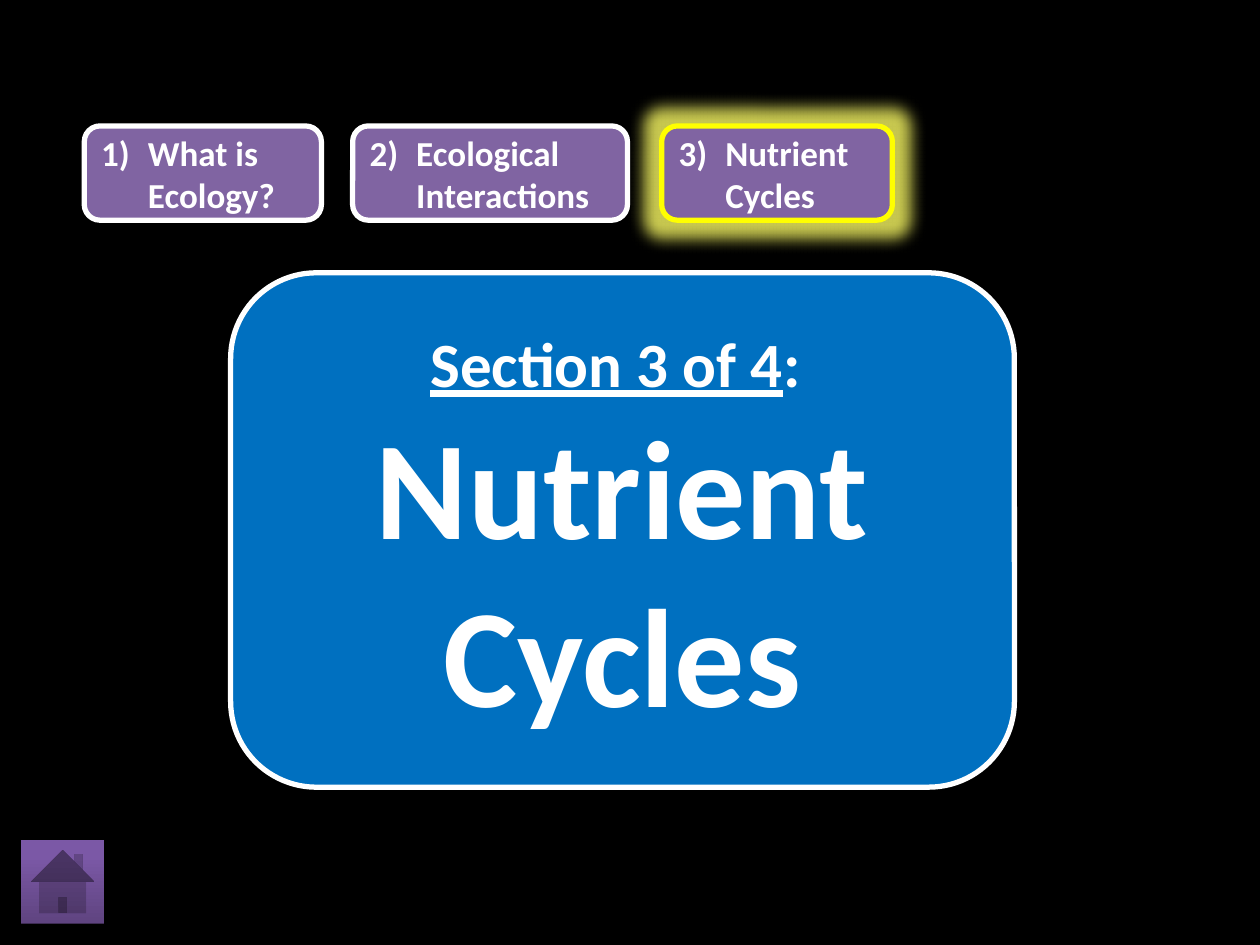
from dataclasses import dataclass

from lxml.etree import SubElement
from pptx import Presentation
from pptx.dml.color import RGBColor
from pptx.enum.shapes import MSO_SHAPE as Kind
from pptx.enum.text import MSO_ANCHOR as Anchor, PP_ALIGN as Align
from pptx.oxml.ns import qn
from pptx.util import Cm, Pt

WHITE, BLACK, YELLOW = "FFFFFF", "000000", "FFFF00"
PURPLE, BLUE, GLOW = "8064A2", "0070C0", "FFFF66"
HANG = Cm(0.94)


@dataclass
class Tab:
    text: str
    left: float
    width: float
    edge: str = WHITE
    glow: bool = False


TABS = [
    Tab("1)\tWhat is Ecology?", 1.7, 4.78),
    Tab("2)\tEcological Interactions", 7.11, 5.54),
    Tab("3)\tNutrient Cycles", 13.34, 4.65, YELLOW, True),
]


def color(code: str) -> RGBColor:
    return RGBColor.from_string(code)


def add_box(slide, left: float, top: float, width: float, height: float,
            fill: str, edge: str = WHITE):
    box = slide.shapes.add_shape(
        Kind.ROUNDED_RECTANGLE, Cm(left), Cm(top), Cm(width), Cm(height))
    box.shadow.inherit = False
    box.fill.solid()
    box.fill.fore_color.rgb = color(fill)
    box.line.color.rgb = color(edge)
    box.line.width = Pt(3)
    box.text_frame.word_wrap = True
    box.text_frame.vertical_anchor = Anchor.MIDDLE
    return box


def add_run(para, text: str, size: int, **extra) -> None:
    run = para.add_run()
    run.text = text
    style = {"name": "Calibri", "size": Pt(size), "bold": True, **extra}
    for key, value in style.items():
        setattr(run.font, key, value)
    run.font.color.rgb = color(WHITE)


def add_glow(shape) -> None:
    effects = shape.element.spPr.find(qn("a:effectLst"))
    glow = SubElement(effects, qn("a:glow"), rad=str(Pt(18)))
    tint = SubElement(glow, qn("a:srgbClr"), val=GLOW)
    SubElement(tint, qn("a:alpha"), val="78000")


def add_tab(slide, tab: Tab) -> None:
    box = add_box(slide, tab.left, 2.54, tab.width, 1.9, PURPLE, tab.edge)
    para = box.text_frame.paragraphs[0]
    para.alignment = Align.LEFT
    props = para._p.get_or_add_pPr()
    props.set("marL", str(HANG))
    props.set("indent", str(-HANG))
    add_run(para, tab.text, 20)
    if tab.glow:
        add_glow(box)


def add_banner(slide) -> None:
    frame = add_box(slide, 4.65, 5.5, 15.8, 10.37, BLUE).text_frame
    head, name = frame.paragraphs[0], frame.add_paragraph()
    head.alignment = name.alignment = Align.CENTER
    add_run(head, "Section 3 of 4", 36, underline=True)
    add_run(head, ": ", 36, underline=False)
    add_run(name, "Nutrient Cycles", 80)


def add_home(slide) -> None:
    home = slide.shapes.add_shape(
        Kind.ACTION_BUTTON_HOME, Cm(0.42), Cm(16.93), Cm(1.69), Cm(1.69))
    home.shadow.inherit = False
    home.line.fill.background()
    home.fill.gradient()
    home.fill.gradient_angle = 90
    shades = [(0, "5F4480"), (0.8, "7B58A6")]
    for stop, (place, code) in zip(home.fill.gradient_stops, shades):
        stop.position = place
        stop.color.rgb = color(code)


def main() -> None:
    deck = Presentation()
    deck.slide_width, deck.slide_height = Cm(25.4), Cm(19.05)
    slide = deck.slides.add_slide(deck.slide_layouts[6])
    back = slide.background.fill
    back.solid()
    back.fore_color.rgb = color(BLACK)
    add_banner(slide)
    add_home(slide)
    for tab in TABS:
        add_tab(slide, tab)
    deck.save("out.pptx")


if __name__ == "__main__":
    main()
